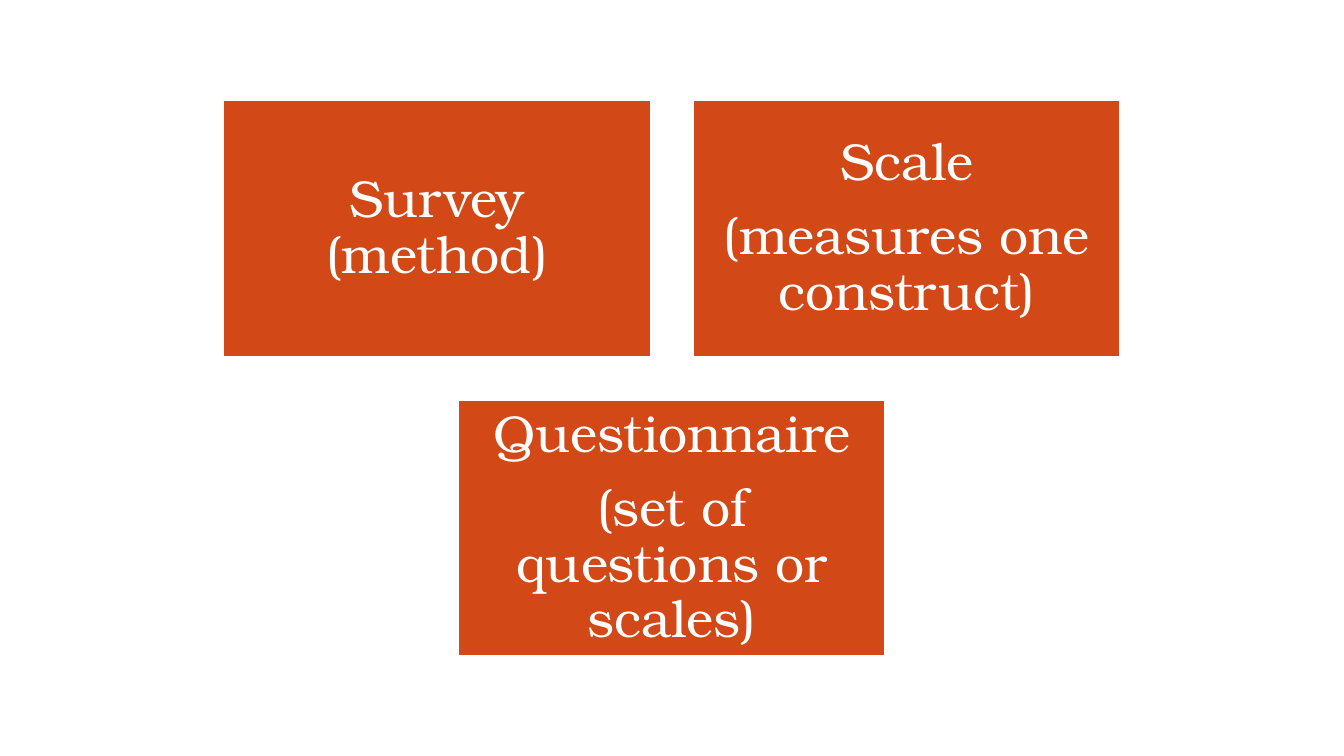
from pptx import Presentation
from pptx.dml.color import RGBColor
from pptx.enum.shapes import MSO_SHAPE as Shape
from pptx.enum.text import MSO_ANCHOR as Anchor, PP_ALIGN as Align
from pptx.util import Inches, Pt

COLORS = {"tile": "D34817", "white": "FFFFFF"}
SLIDE_WIDTH, SLIDE_HEIGHT = 13.33, 7.5
TILE_WIDTH, TILE_HEIGHT = 4.23, 2.54
GAP = 0.43
TOP = 1

# Terms by row, each with its paragraphs
TERM_ROWS = [
    [["Survey (method)"], ["Scale", "(measures one construct)"]],
    [["Questionnaire", "(set of questions or scales)"]],
]


class TermSlide:
    frame_format = {
        "word_wrap": True,
        "vertical_anchor": Anchor.MIDDLE,
        **{f"margin_{side}": Inches(0.15) for side in ("left", "top", "right", "bottom")},
    }
    paragraph_format = {
        "alignment": Align.CENTER,
        "line_spacing": 0.9,
        "space_after": Pt(13),
    }
    font_format = {"name": "TeX Gyre Bonum", "size": Pt(37)}

    def __init__(self, presentation):
        self.slide = presentation.slides.add_slide(presentation.slide_layouts[6])

    @staticmethod
    def color(name):
        return RGBColor.from_string(COLORS[name])

    @staticmethod
    def apply(target, formats):
        for attribute, value in formats.items():
            setattr(target, attribute, value)

    def tile(self, left, top, lines):
        term = self.slide.shapes.add_shape(
            Shape.RECTANGLE, Inches(left), Inches(top),
            Inches(TILE_WIDTH), Inches(TILE_HEIGHT))
        term.shadow.inherit = False
        term.fill.solid()
        term.fill.fore_color.rgb = self.color("tile")
        term.line.color.rgb = self.color("white")
        term.line.width = Pt(1)

        frame = term.text_frame
        self.apply(frame, self.frame_format)
        frame.text = "\n".join(lines)
        for paragraph in frame.paragraphs:
            self.apply(paragraph, self.paragraph_format)
            self.apply(paragraph.font, self.font_format)
            paragraph.font.color.rgb = self.color("white")


def main():
    presentation = Presentation()
    presentation.slide_width = Inches(SLIDE_WIDTH)
    presentation.slide_height = Inches(SLIDE_HEIGHT)
    term_slide = TermSlide(presentation)

    # Centre each row of tiles on the slide
    for row, terms in enumerate(TERM_ROWS):
        row_width = len(terms) * (TILE_WIDTH + GAP) - GAP
        row_left = (SLIDE_WIDTH - row_width) / 2
        for column, lines in enumerate(terms):
            term_slide.tile(row_left + column * (TILE_WIDTH + GAP),
                            TOP + row * (TILE_HEIGHT + GAP), lines)

    presentation.save("out.pptx")


if __name__ == "__main__":
    main()
